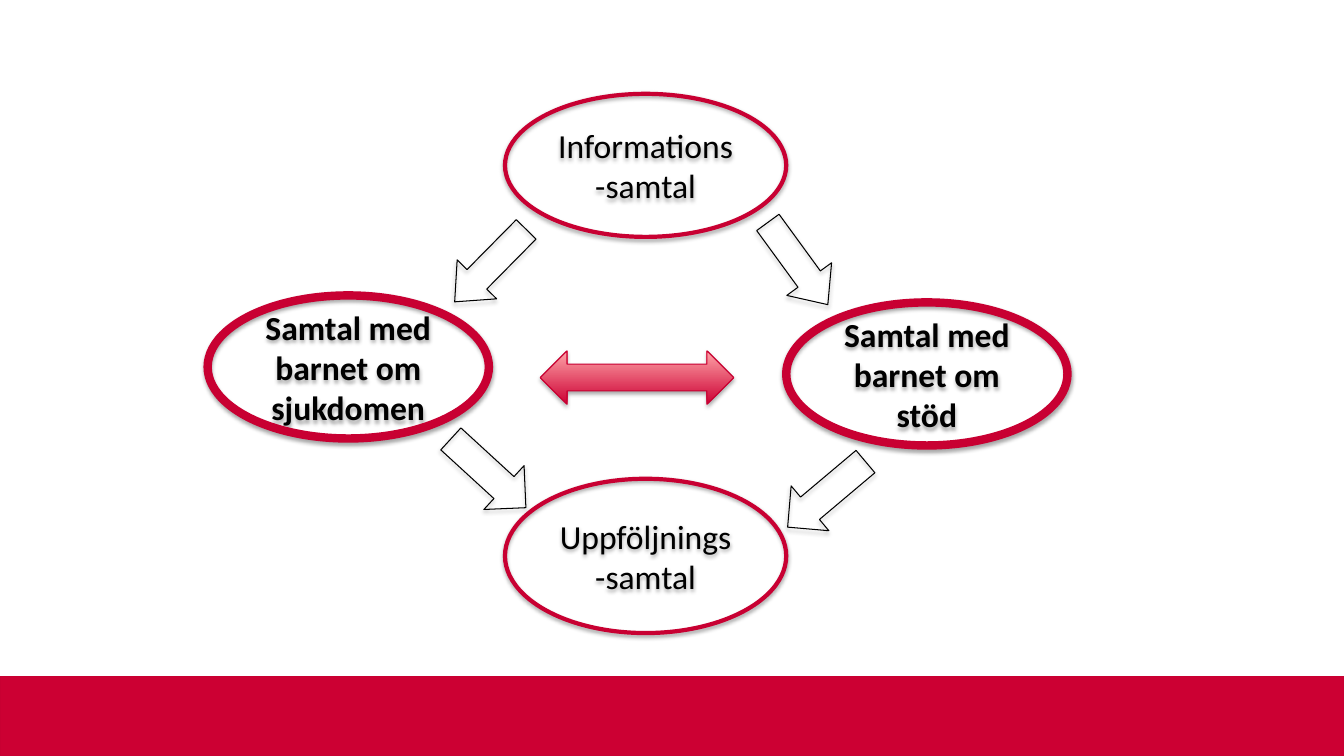
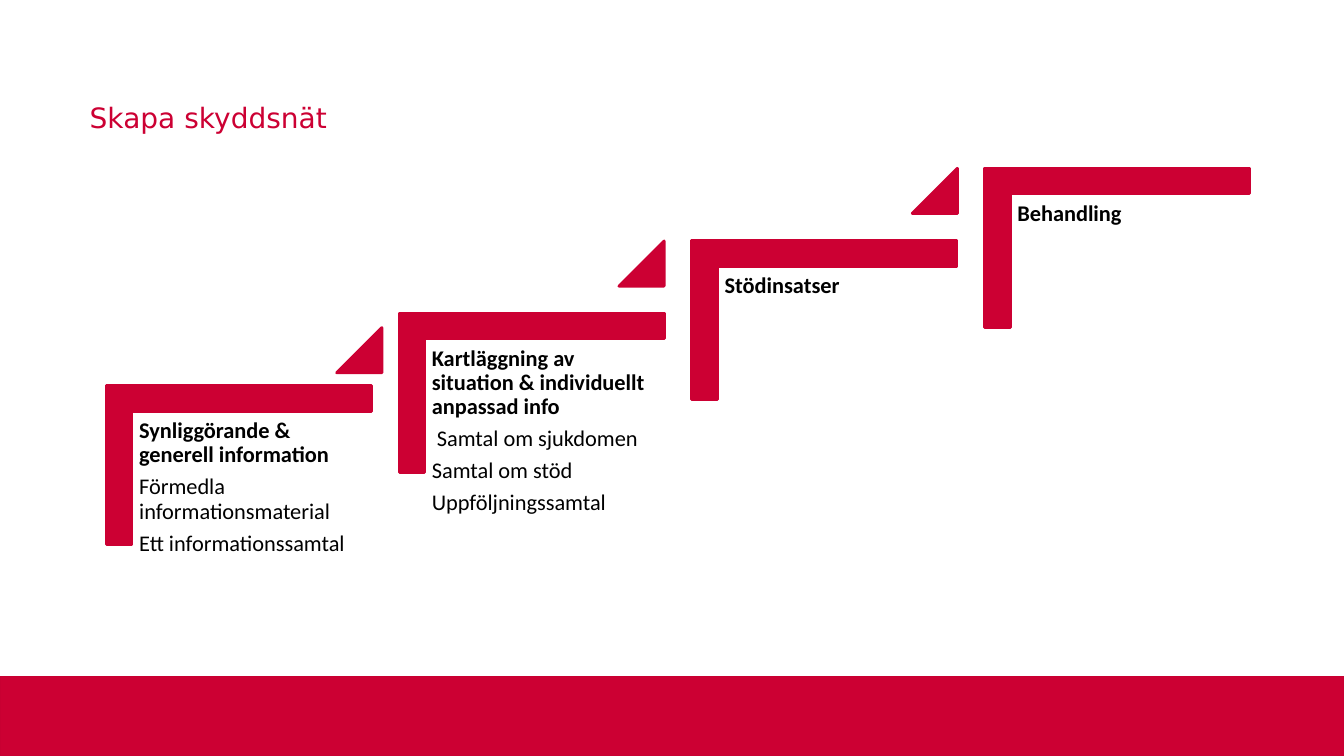
"""Build two slides on conversations with children and a safety net."""
from lxml.etree import SubElement
from pptx import Presentation
from pptx.dml.color import RGBColor
from pptx.enum.shapes import MSO_SHAPE as SHAPE
from pptx.enum.text import MSO_ANCHOR as ANCHOR, PP_ALIGN as ALIGN
from pptx.oxml.ns import qn
from pptx.util import Pt

RED, EDGE, PINK, BLACK = "CC0033", "C80032", "FFA5A9", "000000"
WIDTH, HEIGHT = 960, 540
BAND_TOP = 483
BODY_FONT, TITLE_FONT = "Calibri", "DejaVu Sans"
INSET = 5.1

TOPICS = [
    (360.7, 342, 110.2, "Uppföljnings-samtal", False),
    (360.7, 67, 102.2, "Informations-samtal", False),
    (148.3, 211, 102.2, "Samtal med barnet om sjukdomen", True),
    (561.6, 216, 102.2, "Samtal med barnet om stöd", True),
]
ARROWS = [
    (330.5, 153.4, 39.6, 44.6, 0.57),
    (327.6, 301.7, 42.5, 312.5, 0.5),
    (569.5, 316.8, 41.8, 49.9, 0.5),
    (550.1, 151.9, 39.6, 323.9, 0.57),
]
STEPS = [
    ["Synliggörande & generell information", "Förmedla informationsmaterial",
     "Ett informationssamtal"],
    ["Kartläggning av situation & individuellt anpassad info",
     " Samtal om sjukdomen", "Samtal om stöd", "Uppföljningssamtal"],
    ["Stödinsatser"],
    ["Behandling"],
]
STEP_X, STEP_Y = 209.1, -51.8
STEP_WIDTH, STEP_HEIGHT, STEP_BAR = 189.4, 113.8, 18.3
MARKERS = [(240.5, 234), (442.1, 172.1), (651.6, 120.2)]


def color(value):
    """Return the colour of a hex string."""
    return RGBColor.from_string(value)


def apply(obj, values):
    """Set the attributes of an object from a dict."""
    for name, value in values.items():
        setattr(obj, name, value)


def add_font(r, size, value=BLACK, name=BODY_FONT, bold=False):
    """Format the font of a run."""
    apply(r.font, {"size": Pt(size), "name": name, "bold": bold})
    r.font.color.rgb = color(value)


def add_shadow(sp):
    """Give a shape a soft shadow straight below it."""
    effects = sp._element.spPr.find(qn("a:effectLst"))
    shadow = SubElement(effects, qn("a:outerShdw"), blurRad=str(Pt(3.1)),
                        dist=str(Pt(1.8)), dir="5400000", rotWithShape="0")
    value = SubElement(shadow, qn("a:srgbClr"), val=BLACK)
    SubElement(value, qn("a:alpha"), val="35000")


def paint(sp, line, weight, fill=None):
    """Give a shape its outline and a plain fill or none."""
    sp.shadow.inherit = False
    sp.line.color.rgb = color(line)
    sp.line.width = Pt(weight)
    if fill:
        sp.fill.solid()
        sp.fill.fore_color.rgb = color(fill)
    else:
        sp.fill.background()


def add_shape(s, kind, box, line, weight=0.75, fill=None, rotation=0, adj=()):
    """Add a painted preset shape."""
    sp = s.shapes.add_shape(kind, *map(Pt, box))
    paint(sp, line, weight, fill)
    sp.rotation = rotation
    for i, value in enumerate(adj):
        sp.adjustments[i] = value
    return sp


def add_slide(prs):
    """Add a blank slide with the red band at its foot."""
    s = prs.slides.add_slide(prs.slide_layouts[6])
    add_shape(s, SHAPE.RECTANGLE, (0, BAND_TOP, WIDTH, HEIGHT - BAND_TOP),
              EDGE, fill=RED)
    return s


def add_title(s, text):
    """Add the slide title."""
    tf = s.shapes.add_textbox(Pt(57), Pt(48), Pt(855), Pt(72)).text_frame
    apply(tf, {"word_wrap": True, "vertical_anchor": ANCHOR.MIDDLE})
    r = tf.paragraphs[0].add_run()
    r.text = text
    add_font(r, 20, RED, TITLE_FONT)


def add_topic(s, left, top, height, text, strong):
    """Add an ellipse with centred text."""
    sp = add_shape(s, SHAPE.OVAL, (left, top, 200.9, height), EDGE,
                   6 if strong else 3)
    add_shadow(sp)
    tf = sp.text_frame
    apply(tf, {"word_wrap": True, "vertical_anchor": ANCHOR.MIDDLE})
    p = tf.paragraphs[0]
    p.alignment = ALIGN.CENTER
    r = p.add_run()
    r.text = text
    add_font(r, 24, bold=strong)


def add_arrow(s, left, top, width, rotation, head):
    """Add a turned outline arrow."""
    add_shadow(add_shape(s, SHAPE.DOWN_ARROW, (left, top, width, 72.7), BLACK,
                         rotation=rotation, adj=(0.5, head)))


def add_exchange(s):
    """Add the shaded two-way arrow."""
    sp = add_shape(s, SHAPE.LEFT_RIGHT_ARROW, (385.9, 250.6, 138.2, 38.2), EDGE)
    add_shadow(sp)
    sp.fill.gradient()
    sp.fill.gradient_angle = 90
    for stop, value, place in zip(sp.fill.gradient_stops, (RED, PINK), (0, 1)):
        stop.color.rgb = color(value)
        stop.position = place


def add_corner(s, left, top):
    """Add the angled bar of a step."""
    right, bottom = left + STEP_WIDTH, top + STEP_HEIGHT
    inner_x, inner_y = left + STEP_BAR, top + STEP_BAR
    points = [(right, top), (right, inner_y), (inner_x, inner_y),
              (inner_x, bottom), (left, bottom)]
    outline = s.shapes.build_freeform(Pt(left), Pt(top))
    outline.add_line_segments([(Pt(x), Pt(y)) for x, y in points])
    paint(outline.convert_to_shape(), RED, 2, RED)


def add_step(s, i, lines):
    """Add a stair step with a bold heading and its lines."""
    dx, dy = i * STEP_X, i * STEP_Y
    add_corner(s, 76 + dx, 275.4 + dy)
    box = (94.3 + dx, 294.5 + dy, 170.6, 149.8)
    tf = s.shapes.add_textbox(*map(Pt, box)).text_frame
    apply(tf, {"word_wrap": True, "margin_left": Pt(INSET),
               "margin_right": Pt(INSET), "margin_top": Pt(INSET),
               "margin_bottom": Pt(INSET)})
    for n, text in enumerate(lines):
        p = tf.add_paragraph() if n else tf.paragraphs[0]
        apply(p, {"line_spacing": 0.9, "space_after": Pt(5.6)})
        r = p.add_run()
        r.text = text
        add_font(r, 16, bold=n == 0)


def add_marker(s, left, top):
    """Add the triangle that leads up to the next step."""
    add_shape(s, SHAPE.ISOSCELES_TRIANGLE, (left, top, 32.3, 32.3), RED, 2,
              fill=RED, adj=(1,))


def main():
    """Build and save the slides."""
    prs = Presentation()
    apply(prs, {"slide_width": Pt(WIDTH), "slide_height": Pt(HEIGHT)})

    s = add_slide(prs)
    for topic in TOPICS:
        add_topic(s, *topic)
    for arrow in ARROWS:
        add_arrow(s, *arrow)
    add_exchange(s)

    s = add_slide(prs)
    add_title(s, "Skapa skyddsnät")
    for i, lines in enumerate(STEPS):
        add_step(s, i, lines)
    for marker in MARKERS:
        add_marker(s, *marker)

    prs.save("out.pptx")


if __name__ == "__main__":
    main()
